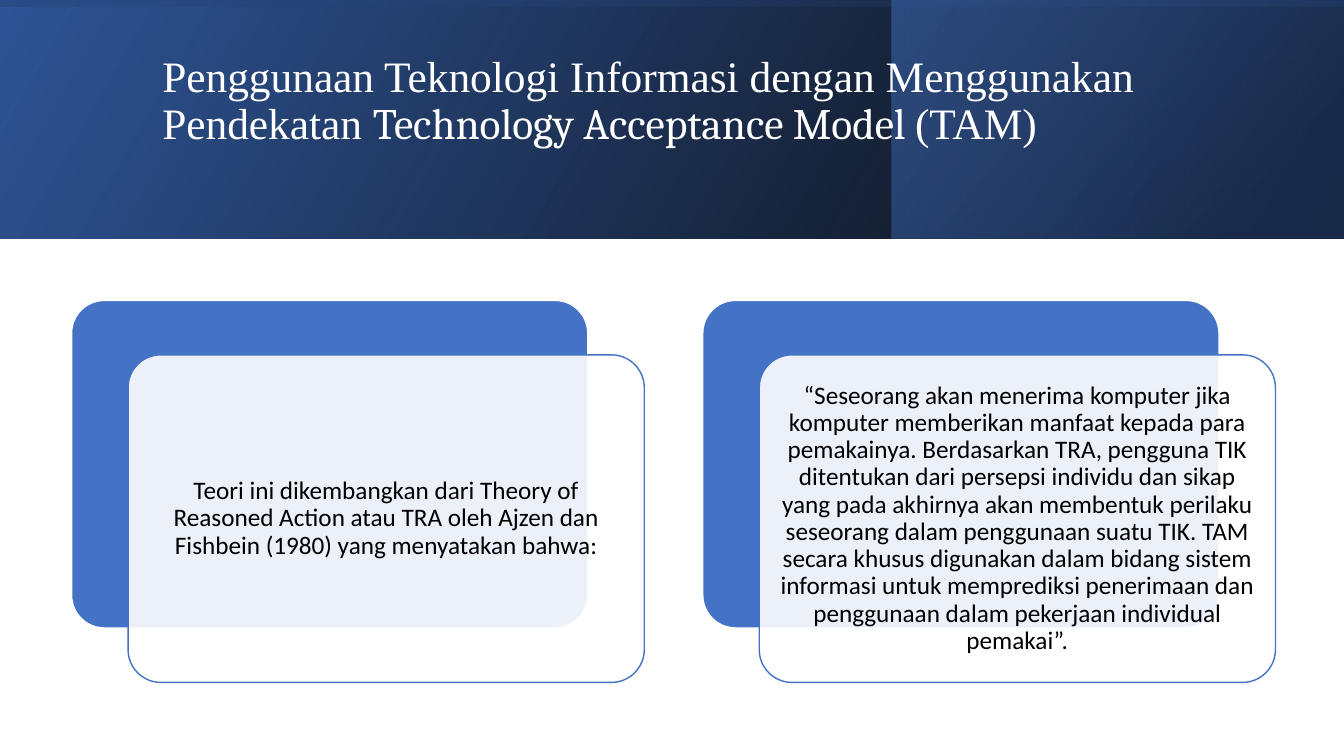
from lxml.etree import SubElement
from pptx import Presentation
from pptx.dml.color import RGBColor
from pptx.enum.shapes import MSO_SHAPE as Preset
from pptx.enum.text import MSO_ANCHOR as Anchor, PP_ALIGN as Align
from pptx.oxml.ns import qn
from pptx.util import Inches, Pt

BLUE, WHITE = "4472C4", "FFFFFF"
BAND_HEIGHT = 2.37
CARD_PITCH = 6.26
CARD_TEXTS = (
    "Teori ini dikembangkan dari Theory of Reasoned Action atau TRA oleh "
    "Ajzen dan Fishbein (1980) yang menyatakan bahwa:",
    "“Seseorang akan menerima komputer jika komputer memberikan manfaat kepada "
    "para pemakainya. Berdasarkan TRA, pengguna TIK ditentukan dari persepsi "
    "individu dan sikap yang pada akhirnya akan membentuk perilaku seseorang "
    "dalam penggunaan suatu TIK. TAM secara khusus digunakan dalam bidang sistem "
    "informasi untuk memprediksi penerimaan dan penggunaan dalam pekerjaan "
    "individual pemakai”.",
)


def paint(color_format, color, opacity=100):
    """Set a colour from a hex string, with opacity in percent."""
    color_format.rgb = RGBColor.from_string(color)
    if opacity < 100:
        choice = color_format._xFill.find(qn("a:srgbClr")) if hasattr(
            color_format, "_xFill") else None
        if choice is not None:
            SubElement(choice, qn("a:alpha"), val=str(opacity * 1000))


def set_opacity(color_element, opacity):
    """Give a colour element an opacity in percent."""
    if opacity < 100:
        SubElement(color_element, qn("a:alpha"), val=str(opacity * 1000))


def add_preset(slide, preset, left, top, width, height):
    """Add a preset shape without a shadow."""
    shape = slide.shapes.add_shape(
        preset, Inches(left), Inches(top), Inches(width), Inches(height))
    shape.shadow.inherit = False
    return shape


def add_band(slide, left, top, width, height, stops, angle, rotation=0):
    """Add a mirrored header band with a two-stop gradient."""
    band = add_preset(slide, Preset.RECTANGLE, left, top, width, height)
    band.rotation = rotation
    band._element.spPr.find(qn("a:xfrm")).set("flipH", "1")
    band.line.fill.background()
    band.fill.gradient()
    band.fill.gradient_angle = angle
    gradient_stops = band.fill.gradient_stops
    for stop, (position, color, _) in zip(gradient_stops, stops):
        stop.position = position
        paint(stop.color, color)
    colors = band._element.spPr.iter(qn("a:srgbClr"))
    for color_element, (_, _, opacity) in zip(list(colors), stops):
        set_opacity(color_element, opacity)


def add_text(paragraph, text, font="Calibri", size=18, color="000000"):
    """Append a formatted run to a paragraph."""
    run = paragraph.add_run()
    run.text = text
    run.font.name = font
    run.font.size = Pt(size)
    paint(run.font.color, color)


def add_panel(slide, left, top, fill, line, opacity=100):
    """Add one rounded panel of a card."""
    panel = add_preset(slide, Preset.ROUNDED_RECTANGLE, left, top, 5.12, 3.25)
    panel.adjustments[0] = 0.1
    panel.fill.solid()
    paint(panel.fill.fore_color, fill)
    set_opacity(next(panel._element.spPr.iter(qn("a:srgbClr"))), opacity)
    paint(panel.line.color, line)
    panel.line.width = Pt(1)
    return panel


def add_card(slide, left, text):
    """Add a blue panel with a translucent text panel overlapping it."""
    add_panel(slide, left, 2.98, BLUE, WHITE)
    frame = add_panel(slide, left + 0.56, 3.52, WHITE, BLUE, 90).text_frame
    frame.word_wrap = True
    frame.vertical_anchor = Anchor.MIDDLE
    frame.margin_left = frame.margin_right = Inches(0.07)
    frame.margin_top = frame.margin_bottom = Inches(0.07)
    paragraph = frame.paragraphs[0]
    paragraph.alignment = Align.CENTER
    paragraph.line_spacing = 0.9
    add_text(paragraph, text)


def set_title(slide):
    """Place and fill the title."""
    title = slide.shapes.title
    title.left, title.top = Inches(1.51), Inches(0.38)
    title.width, title.height = Inches(10.63), Inches(1.72)
    frame = title.text_frame
    frame.word_wrap = True
    frame.vertical_anchor = Anchor.MIDDLE
    frame.margin_bottom = Inches(0.5)
    paragraph = frame.paragraphs[0]
    paragraph.alignment = Align.LEFT
    paragraph.line_spacing = 0.9
    for text, font in (
        ("Penggunaan Teknologi Informasi dengan Menggunakan Pendekatan ",
         "Times New Roman"),
        ("Technology Acceptance Model ", "Cambria"),
        ("(TAM)", "Times New Roman"),
    ):
        add_text(paragraph, text, font=font, size=31, color=WHITE)


def main():
    """Build and save the slide."""
    deck = Presentation()
    deck.slide_width, deck.slide_height = Inches(13.33), Inches(7.5)
    slide = deck.slides.add_slide(deck.slide_layouts[5])
    add_band(slide, 0, 0, 13.33, BAND_HEIGHT,
             ((0, "000000", 96), (1, "2F5597", 100)), 30)
    add_band(slide, 8.84, 0, 4.49, BAND_HEIGHT,
             ((0.19, "203864", 68), (1, BLUE, 48)), 40)
    add_band(slide, 5.48, -5.48, BAND_HEIGHT, 13.33,
             ((0.23, "2F5597", 16), (0.99, "000000", 45)), 10, rotation=270)
    title_element = slide.shapes.title._element
    title_element.getparent().append(title_element)
    set_title(slide)
    for column, text in enumerate(CARD_TEXTS):
        add_card(slide, 0.71 + column * CARD_PITCH, text)
    deck.save("out.pptx")


if __name__ == "__main__":
    main()
